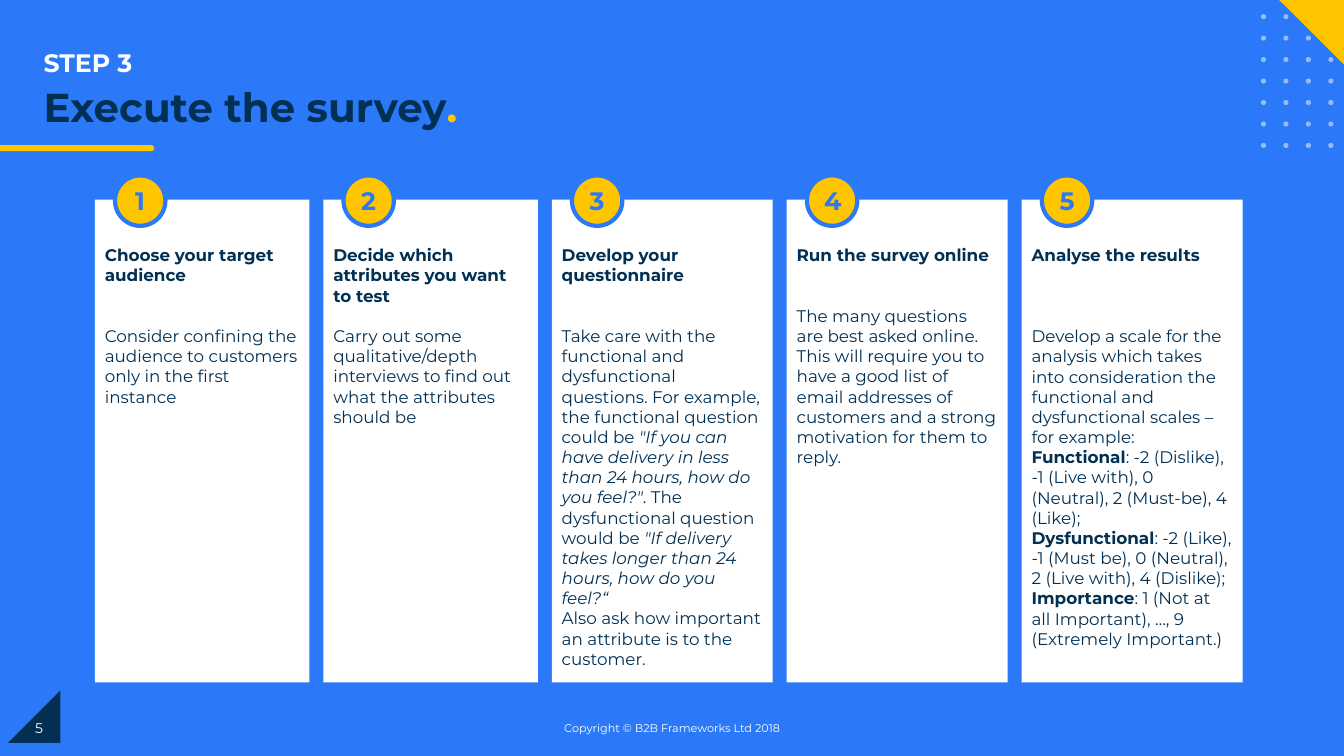
"""Build the five-card survey step slide."""
from dataclasses import dataclass
from itertools import product

from lxml.etree import SubElement as Sub
from pptx import Presentation
from pptx.dml.color import RGBColor as RGB
from pptx.enum.shapes import MSO_SHAPE as Kind
from pptx.enum.text import MSO_ANCHOR as Anchor, MSO_AUTO_SIZE as Fit, PP_ALIGN as Align
from pptx.oxml.ns import qn
from pptx.util import Inches, Pt


@dataclass(frozen=True)
class Theme:
    blue: RGB = RGB.from_string("2B79F8")
    navy: RGB = RGB.from_string("023053")
    gold: RGB = RGB.from_string("FFC600")
    white: RGB = RGB.from_string("FFFFFF")
    font: str = "Montserrat"
    title: float = 28.8
    step: float = 18
    body: float = 12
    page: float = 10
    foot: float = 8


T = Theme()
deck = Presentation()
deck.slide_width, deck.slide_height = Inches(13.333), Inches(7.5)
slide = deck.slides.add_slide(deck.slide_layouts[5])
slide.background.fill.solid()
slide.background.fill.fore_color.rgb = T.blue


def place(kind, x, y, w, h, fill=None):
    """Add a shape, or a text box if kind is None, in percent of the slide."""
    wide, high = deck.slide_width / 100, deck.slide_height / 100
    box = [int(v) for v in (x * wide, y * high, w * wide, h * high)]
    if kind is None:
        return slide.shapes.add_textbox(*box)
    shape = slide.shapes.add_shape(kind, *box)
    shape.shadow.inherit = False
    shape.fill.solid()
    shape.fill.fore_color.rgb = fill
    shape.line.fill.background()
    return shape


def write(shape, paras, size, tint, align=Align.LEFT, **frame):
    """Fill a shape with (space before, [(text, format), ...]) paragraphs."""
    text = shape.text_frame
    look = {"word_wrap": True, "auto_size": Fit.NONE, "vertical_anchor": Anchor.TOP,
            "margin_left": Inches(0.1), "margin_right": Inches(0.1),
            "margin_top": Inches(0.05), "margin_bottom": Inches(0.05)} | frame
    for key, value in look.items():
        setattr(text, key, value)
    for n, (space, runs) in enumerate(paras):
        para = text.add_paragraph() if n else text.paragraphs[0]
        para.alignment = align
        para.space_before = Pt(space)
        for words, form in runs:
            run = para.add_run()
            run.text = words
            form = {"name": T.font, "size": Pt(size), "bold": False, "tint": tint} | form
            run.font.color.rgb = form.pop("tint")
            for key, value in form.items():
                setattr(run.font, key, value)


bold, slant, plain = {"bold": True}, {"italic": True}, {}

fold = place(Kind.RIGHT_TRIANGLE, 0.6, 91.33, 3.9, 6.93, T.navy)
fold.element.spPr.xfrm.set("flipH", "1")
place(Kind.FLOWCHART_TERMINATOR, 10.05, 19.2, 1.43, 0.8, T.gold)
place(Kind.RECTANGLE, 0, 19.2, 10.57, 0.8, T.gold)

for row, col in product(range(7), range(4)):
    dot = place(Kind.OVAL, 93.82 + 1.67 * col, 1.87 + 2.84 * row, 0.38, 0.67, T.white)
    shade = dot.element.spPr.find(qn("a:solidFill"))[0]
    Sub(shade, qn("a:alpha"), val="50000")
place(Kind.RIGHT_TRIANGLE, 95.18, 0, 4.82, 8.53, T.gold).rotation = 180

write(place(None, 2.5, 5.6, 50.2, 5.33), [(0, [("STEP 3", bold)])], T.step, T.white)
title = slide.shapes.title
spot = {"left": (2.5, deck.slide_width), "top": (10.93, deck.slide_height),
        "width": (42.3, deck.slide_width), "height": (7.47, deck.slide_height)}
for key, (share, whole) in spot.items():
    setattr(title, key, int(share * whole / 100))
write(title, [(0, [("Execute the survey", bold), (".", bold | {"tint": T.gold})])],
      T.title, T.navy)
title.text_frame.paragraphs[0].line_spacing = 0.9

cards = [
    (15.96, "Choose your target audience", 2, [
        [("Consider confining the audience to customers only in the first instance", plain)]]),
    (15.96, "Decide which attributes you want to test", 1, [
        [("Carry out some qualitative/depth interviews to find out what the attributes "
          "should be", plain)]]),
    (16.44, "Develop your questionnaire", 2, [
        [("Take care with the functional and dysfunctional questions. For example, "
          "the functional question could be ", plain),
         ('"If you can have delivery in less than 24 hours, how do you feel?"', slant),
         (". The dysfunctional question would be ", plain),
         ('"If delivery takes longer than 24 hours, how do you feel?“', slant)],
        [("Also ask how important an attribute is to the customer.", plain)]]),
    (16.44, "Run the survey online", 2, [
        [("The many questions are best asked online. This will require you to have a good "
          "list of email addresses of customers and a strong motivation for them to reply.",
          plain)]]),
    (16.44, "Analyse the results", 3, [
        [("Develop a scale for the analysis which takes into consideration the functional "
          "and dysfunctional scales – for example:", plain)],
        [("Functional", bold),
         (": -2 (Dislike), -1 (Live with), 0 (Neutral), 2 (Must-be), 4 (Like);", plain)],
        [("Dysfunctional", bold),
         (": -2 (Like), -1 (Must be), 0 (Neutral), 2 (Live with), 4 (Dislike);", plain)],
        [("Importance", bold),
         (": 1 (Not at all Important), …, 9 (Extremely Important.)", plain)]]),
]
left, gap, pitch = 7.06, 1.04, 14.5
for n, (wide, head, skip, body) in enumerate(cards, 1):
    card = place(Kind.RECTANGLE, left, 26.4, wide, 63.87, T.white)
    paras = [(0, [(head, bold)])]
    paras += [(0 if k else skip * pitch, runs) for k, runs in enumerate(body)]
    write(card, paras, T.body, T.navy, margin_top=Inches(0.45))
    badge = place(Kind.OVAL, left + 1.5, 23.2, 3.75, 6.67, T.gold)
    badge.line.color.rgb = T.blue
    badge.line.width = Pt(3)
    write(badge, [(0, [(str(n), bold)])], T.step, T.blue, Align.CENTER,
          vertical_anchor=Anchor.MIDDLE)
    left += wide + gap

for x, wide, words, size, align in (
        (33.15, 33.75, "Copyright © B2B Frameworks Ltd 2018", T.foot, Align.CENTER),
        (1.88, 22.5, "5", T.page, Align.LEFT)):
    write(place(None, x, 93.6, wide, 5.33), [(0, [(words, plain)])], size, T.white, align,
          vertical_anchor=Anchor.MIDDLE)

deck.save("out.pptx")
